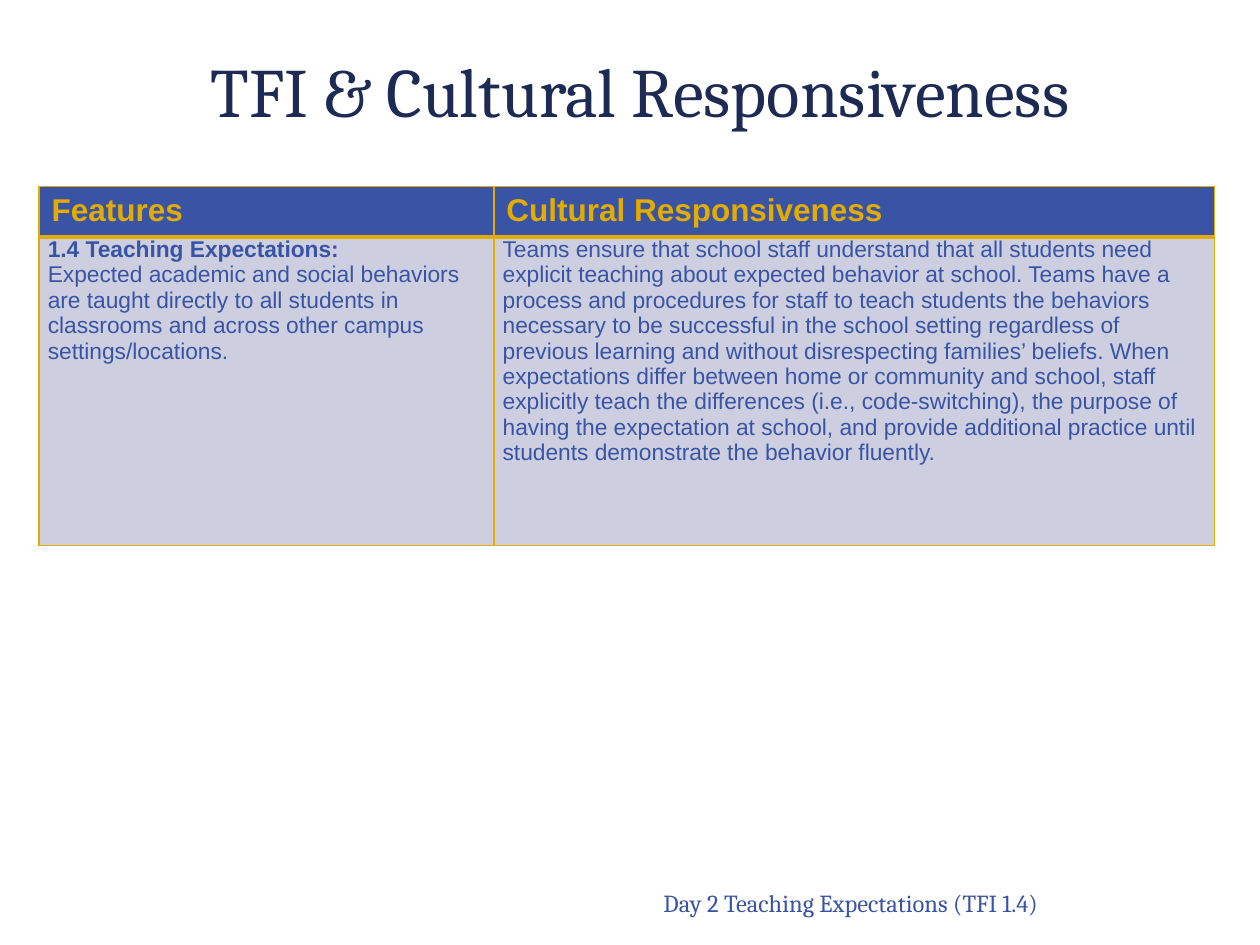
"""Build the slide on TFI and cultural responsiveness."""
from dataclasses import dataclass

from lxml import etree
from pptx import Presentation
from pptx.dml.color import RGBColor
from pptx.enum.text import MSO_ANCHOR, PP_ALIGN
from pptx.oxml.ns import qn
from pptx.util import Inches, Pt

TITLE_ONLY = 5
CENTER, RIGHT = PP_ALIGN.CENTER, PP_ALIGN.RIGHT
TOP, MIDDLE, BOTTOM = MSO_ANCHOR.TOP, MSO_ANCHOR.MIDDLE, MSO_ANCHOR.BOTTOM


@dataclass(frozen=True)
class Theme:
    """Colours, fonts and type sizes of the slide."""
    navy: str = "1D2A53"
    blue: str = "3A54A5"
    gold: str = "E2AC00"
    pale: str = "CDCFE0"
    serif: str = "Cambria"
    sans: str = "Arial"
    title_size: float = 39.6
    header_size: float = 18
    body_size: float = 13
    footer_size: float = 14
    rule: float = 1
    heavy_rule: float = 3


THEME = Theme()
COLUMN_WIDTHS = (3.61, 1.91, 3.81)
ROW_HEIGHTS = (0.38, 2.45)
HEADERS = ("Features", "Cultural Responsiveness")
FEATURE = (
    ("1.4 Teaching Expectations:", True),
    ("Expected academic and social behaviors are taught directly to all students in "
     "classrooms and across other campus settings/locations.", False),
)
RESPONSE = (
    ("Teams ensure that school staff understand that all students need explicit teaching "
     "about expected behavior at school. Teams have a process and procedures for staff to "
     "teach students the behaviors necessary to be successful in the school setting "
     "regardless of previous learning and without disrespecting families’ beliefs. When "
     "expectations differ between home or community and school, staff explicitly teach the "
     "differences (i.e., code-switching), the purpose of having the expectation at school, "
     "and provide additional practice until students demonstrate the behavior fluently.",
     False),
)


def apply_format(target, values):
    """Set each named attribute on the target."""
    for name, value in values.items():
        setattr(target, name, value)


def write_paragraph(paragraph, text, font, size, color, bold=False, align=None):
    """Fill a paragraph with one formatted run."""
    paragraph.alignment = align
    run = paragraph.add_run()
    run.text = text
    apply_format(run.font, {"name": font, "size": Pt(size), "bold": bold})
    run.font.color.rgb = RGBColor.from_string(color)


def place(shape, left, top, width, height):
    """Set the position and size of a shape in inches."""
    apply_format(shape, {"left": Inches(left), "top": Inches(top),
                         "width": Inches(width), "height": Inches(height)})


def add_title(slide, text):
    """Write the slide title in its placeholder."""
    title = slide.shapes.title
    place(title, 1, 0.32, 8.16, 0.79)
    apply_format(title.text_frame, {"word_wrap": True, "vertical_anchor": MIDDLE})
    write_paragraph(title.text_frame.paragraphs[0], text, THEME.serif,
                    THEME.title_size, THEME.navy, align=CENTER)


def add_footer(slide, text):
    """Add the right-aligned session line at the foot of the slide."""
    footer = slide.shapes.add_textbox(Inches(1.48), Inches(6.69), Inches(6.86), Inches(0.64))
    apply_format(footer.text_frame, {"word_wrap": True, "vertical_anchor": BOTTOM})
    write_paragraph(footer.text_frame.paragraphs[0], text, THEME.serif,
                    THEME.footer_size, THEME.blue, align=RIGHT)


def set_borders(cell, top, bottom):
    """Draw gold rules round a cell with the given top and bottom weights."""
    properties = cell._tc.get_or_add_tcPr()
    weights = {"lnL": THEME.rule, "lnR": THEME.rule, "lnT": top, "lnB": bottom}
    for index, (side, weight) in enumerate(weights.items()):
        line = etree.Element(qn(f"a:{side}"), w=str(Pt(weight)))
        fill = etree.SubElement(line, qn("a:solidFill"))
        etree.SubElement(fill, qn("a:srgbClr"), val=THEME.gold)
        properties.insert(index, line)


def style_row(row, fill, side_margin, edge_margin, top, bottom):
    """Give every cell of a row its fill, margins and rules."""
    for cell in row.cells:
        apply_format(cell, {"margin_left": Inches(side_margin),
                            "margin_right": Inches(side_margin),
                            "margin_top": Inches(edge_margin),
                            "margin_bottom": Inches(edge_margin),
                            "vertical_anchor": TOP})
        cell.fill.solid()
        cell.fill.fore_color.rgb = RGBColor.from_string(fill)
        set_borders(cell, top, bottom)


def write_cell(cell, paragraphs, size, color):
    """Write (text, bold) paragraphs into a table cell."""
    frame = cell.text_frame
    for index, (text, bold) in enumerate(paragraphs):
        paragraph = frame.add_paragraph() if index else frame.paragraphs[0]
        write_paragraph(paragraph, text, THEME.sans, size, color, bold)


def add_feature_table(slide):
    """Add the table pairing the feature with its cultural response."""
    table = slide.shapes.add_table(
        len(ROW_HEIGHTS), len(COLUMN_WIDTHS), Inches(0.31), Inches(1.48),
        Inches(sum(COLUMN_WIDTHS)), Inches(sum(ROW_HEIGHTS))).table
    apply_format(table, {"first_row": False, "horz_banding": False})
    for column, width in zip(table.columns, COLUMN_WIDTHS):
        column.width = Inches(width)
    for row, height in zip(table.rows, ROW_HEIGHTS):
        row.height = Inches(height)
    for row_index in range(len(ROW_HEIGHTS)):
        table.cell(row_index, 1).merge(table.cell(row_index, 2))
    style_row(table.rows[0], THEME.blue, 0.1, 0.05, THEME.rule, THEME.heavy_rule)
    style_row(table.rows[1], THEME.pale, 0.07, 0, THEME.heavy_rule, THEME.rule)
    for column, (header, body) in enumerate(zip(HEADERS, (FEATURE, RESPONSE))):
        write_cell(table.cell(0, column), [(header, True)], THEME.header_size, THEME.gold)
        write_cell(table.cell(1, column), body, THEME.body_size, THEME.blue)


def main():
    """Build and save the presentation."""
    presentation = Presentation()
    apply_format(presentation, {"slide_width": Inches(10), "slide_height": Inches(7.5)})
    slide = presentation.slides.add_slide(presentation.slide_layouts[TITLE_ONLY])
    add_footer(slide, "Day 2 Teaching Expectations (TFI 1.4)")
    add_feature_table(slide)
    add_title(slide, "TFI & Cultural Responsiveness")
    presentation.save("out.pptx")


if __name__ == "__main__":
    main()
